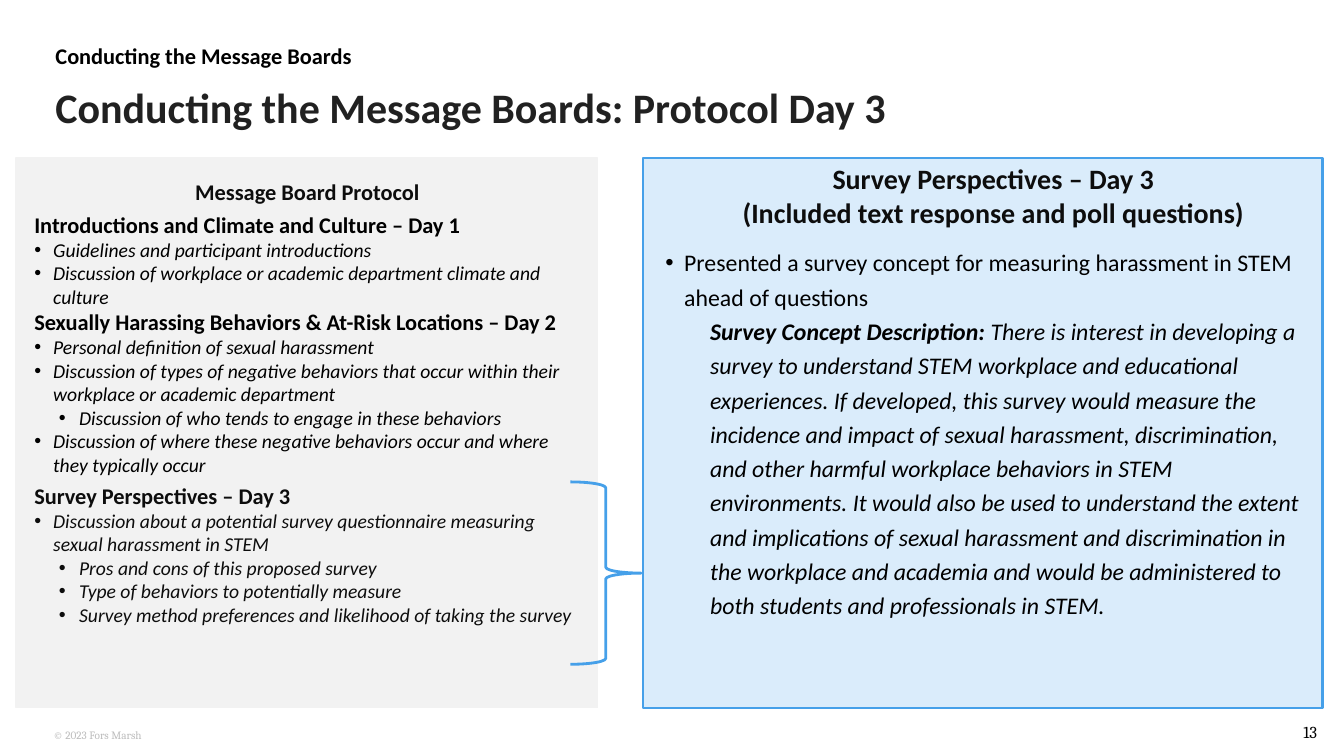
import pptx
import pptx.util
import pptx.dml.color
import pptx.enum.shapes
import pptx.enum.text
from lxml import etree

Pt = pptx.util.Pt
ALIGN = pptx.enum.text.PP_ALIGN
ANCHOR = pptx.enum.text.MSO_ANCHOR
SHAPE = pptx.enum.shapes.MSO_SHAPE
A = "{http://schemas.openxmlformats.org/drawingml/2006/main}"

COLORS = {
    "black": "000000", "ink": "0D0D0D", "title": "212121", "footer": "BCBCBC",
    "grey": "F2F2F2", "pale": "DAECFB", "blue": "46A0E9",
}
# Bullet level: (left margin, hanging indent)
INDENTS = [(13.5, -13.5), (32, -14.5)]

# Protocol sections: heading, colour, line spacing, items as (level, text)
PROTOCOL = [
    ("Introductions and Climate and Culture – Day 1", "black", 1.0, [
        (0, "Guidelines and participant introductions"),
        (0, "Discussion of workplace or academic department climate and culture"),
    ]),
    ("Sexually Harassing Behaviors & At-Risk Locations – Day 2", "black", 1.0, [
        (0, "Personal definition of sexual harassment"),
        (0, "Discussion of types of negative behaviors that occur within their "
            "workplace or academic department"),
        (1, "Discussion of who tends to engage in these behaviors"),
        (0, "Discussion of where these negative behaviors occur and where they "
            "typically occur"),
    ]),
    ("Survey Perspectives – Day 3", "ink", 1.2, [
        (0, "Discussion about a potential survey questionnaire measuring sexual "
            "harassment in STEM"),
        (1, "Pros and cons of this proposed survey"),
        (1, "Type of behaviors to potentially measure"),
        (1, "Survey method preferences and likelihood of taking the survey"),
    ]),
]
CONCEPT = (
    " There is interest in developing a survey to understand STEM workplace and "
    "educational experiences. If developed, this survey would measure the incidence "
    "and impact of sexual harassment, discrimination, and other harmful workplace "
    "behaviors in STEM environments. It would also be used to understand the extent "
    "and implications of sexual harassment and discrimination in the workplace and "
    "academia and would be administered to both students and professionals in STEM."
)


def rgb(name):
    return pptx.dml.color.RGBColor.from_string(COLORS[name])


def place(sp, x, y, w, h):
    sp.left, sp.top, sp.width, sp.height = Pt(x), Pt(y), Pt(w), Pt(h)


def frame(sp, box, inset=(7.2, 3.6), anchor=ANCHOR.TOP, wrap=True):
    """Place a text shape and return its prepared text frame."""
    place(sp, *box)
    tf = sp.text_frame
    tf.word_wrap = wrap
    tf.auto_size = pptx.enum.text.MSO_AUTO_SIZE.NONE
    tf.vertical_anchor = anchor
    tf.margin_left = tf.margin_right = Pt(inset[0])
    tf.margin_top = tf.margin_bottom = Pt(inset[1])
    return tf


def add_run(p, text, size, color, bold=False, italic=False, font="Calibri"):
    r = p.add_run()
    r.text = text
    r.font.name, r.font.size = font, Pt(size)
    r.font.bold, r.font.italic = bold, italic
    r.font.color.rgb = rgb(color)


def add_para(tf, first=False, align=ALIGN.LEFT, spacing=1.0, after=0,
             margin=0, indent=0, bullet=False):
    p = tf.paragraphs[0] if first else tf.add_paragraph()
    p.alignment, p.line_spacing = align, spacing
    p.space_before, p.space_after = Pt(0), Pt(after)
    pPr = p._p.get_or_add_pPr()
    pPr.set("marL", str(Pt(margin)))
    pPr.set("indent", str(Pt(indent)))
    if bullet:
        etree.SubElement(pPr, A + "buFont", typeface="Arial")
        etree.SubElement(pPr, A + "buChar", char="•")
    else:
        etree.SubElement(pPr, A + "buNone")
    return p


def add_bullet(tf, text, size, level=0, first=False, spacing=1.0, **style):
    margin, indent = INDENTS[level]
    p = add_para(tf, first, spacing=spacing, margin=margin, indent=indent, bullet=True)
    p.level = level
    add_run(p, text, size, **style)


def add_panel(slide, box, fill, line, width):
    """Add a background rectangle behind the placeholders."""
    sp = slide.shapes.add_shape(SHAPE.RECTANGLE, 0, 0, 0, 0)
    place(sp, *box)
    sp.shadow.inherit = False
    sp.fill.solid()
    sp.fill.fore_color.rgb = rgb(fill)
    sp.line.color.rgb = rgb(line)
    sp.line.width = Pt(width)
    slide.shapes._spTree.insert(2, sp._element)


def header(slide, box):
    x, y, w, h = box
    # Section name
    tf = frame(slide.placeholders[1], (x, y, 405, 31), (4.3, 4.3))
    add_run(add_para(tf, True), "Conducting the Message Boards", 16, "black", bold=True)
    # Slide title
    tf = frame(slide.shapes.title, (x, y + 35.3, w, h - 35.3), (4.3, 4.3))
    add_run(add_para(tf, True, spacing=0.8),
            "Conducting the Message Boards: Protocol Day 3", 30, "title", bold=True)


def protocol_panel(slide, box):
    x, y, w, h = box
    add_panel(slide, box, "grey", "grey", 1)
    tf = frame(slide.placeholders[2], (x + 5.8, y + 10.8, w - 10.9, 339))
    p = add_para(tf, True, align=ALIGN.CENTER, after=4)
    add_run(p, "Message Board Protocol", 16, "ink", bold=True)
    for heading, color, spacing, items in PROTOCOL:
        add_run(add_para(tf, spacing=spacing), heading, 16, color, bold=True)
        for level, text in items:
            add_bullet(tf, text, 14, level, color=color, italic=True)


def survey_panel(slide, box):
    x, y, w, h = box
    add_panel(slide, box, "pale", "blue", 1.5)
    # Heading
    tf = frame(slide.placeholders[3], (x, y - 5.7, w + 15, 60.5))
    lines = [("Survey Perspectives – Day 3", 1.2),
             ("(Included text response and poll questions)", 1.0)]
    for i, (text, spacing) in enumerate(lines):
        p = add_para(tf, i == 0, align=ALIGN.CENTER, spacing=spacing)
        add_run(p, text, 20, "ink", bold=True)
    # Concept
    tf = frame(slide.placeholders[4], (x + 11.5, y + 54.8, w - 22.3, 280),
               (4.3, 4.3), ANCHOR.MIDDLE)
    add_bullet(tf, "Presented a survey concept for measuring harassment in STEM "
               "ahead of questions", 17, first=True, spacing=1.2, color="black")
    p = add_para(tf, spacing=1.2, margin=INDENTS[1][0])
    add_run(p, "Survey Concept Description:", 17, "black", bold=True, italic=True)
    add_run(p, CONCEPT, 17, "black", italic=True)


def day_brace(slide, box):
    sp = slide.shapes.add_shape(SHAPE.RIGHT_BRACE, 0, 0, 0, 0)
    place(sp, *box)
    sp.shadow.inherit = False
    sp.fill.background()
    sp.line.color.rgb = rgb("blue")
    sp.line.width = Pt(2)


def footer(slide, box):
    x, y, w, h = box
    sp = slide.shapes.add_textbox(0, 0, 0, 0)
    tf = frame(sp, (x, y + 6.5, 405, 20))
    add_run(add_para(tf, True), "© 2023 Fors Marsh", 8, "footer", font="Cambria")
    # Slide number
    sp = slide.shapes.add_textbox(0, 0, 0, 0)
    tf = frame(sp, (x + w - 18, y, 18, h), (2.2, 2.2), wrap=False)
    add_run(add_para(tf, True, spacing=1.2), "13", 12, "black", font="Cambria")


def main():
    prs = pptx.Presentation()
    prs.slide_width, prs.slide_height = Pt(960), Pt(540)
    slide = prs.slides.add_slide(prs.slide_layouts.get_by_name("Comparison"))
    header(slide, (35.3, 25.9, 849, 83.5))
    protocol_panel(slide, (11.5, 113, 415.5, 392.5))
    survey_panel(slide, (459.4, 113, 485.3, 392.5))
    day_brace(slide, (407.5, 344.2, 50.4, 130.3))
    footer(slide, (31, 510.5, 915.8, 21))
    prs.save("out.pptx")


if __name__ == "__main__":
    main()
